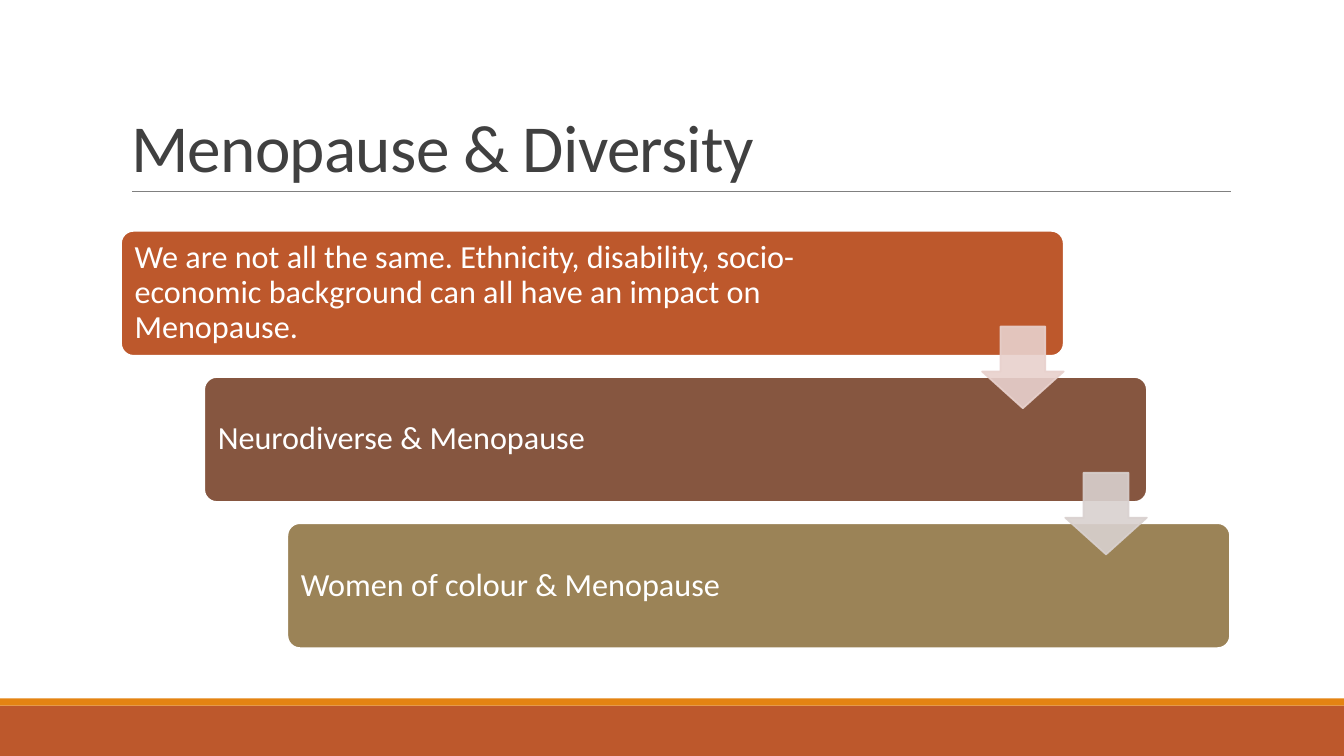
import pptx
import pptx.dml.color
import pptx.enum.shapes
import pptx.enum.text
import pptx.oxml
import pptx.oxml.ns
import pptx.util

Inches, Pt = pptx.util.Inches, pptx.util.Pt
SHAPES = pptx.enum.shapes.MSO_SHAPE
ANCHOR = pptx.enum.text.MSO_ANCHOR
ALIGN = pptx.enum.text.PP_ALIGN

HEADING = "Menopause & Diversity"
STEPS = [
    ("We are not all the same. Ethnicity, disability, socio-economic background "
     "can all have an impact on Menopause.", "rust"),
    ("Neurodiverse & Menopause", "brown"),
    ("Women of colour & Menopause", "khaki"),
]
ARROW_COLORS = ["pink", "mist"]
COLORS = {
    "rust": "BD582C", "brown": "865640", "khaki": "9B8357", "orange": "E48312",
    "pink": "E8D1CD", "mist": "D9D1CF", "heading": "404040", "rule": "808080",
    "white": "FFFFFF",
}
FONT = "Calibri"
SLIDE_W, SLIDE_H = 13.33, 7.5
LEFT, CONTENT_W = 1.2, 11
STEP_TOP, STEP_W, STEP_H, STEP_PITCH = 2.29, 9.35, 1.24, 1.45
STEP_INDENT = (CONTENT_W - STEP_W) / (len(STEPS) - 1)
ARROW_SIZE, ARROW_DROP = 0.81, 0.95


def rgb(color):
    return pptx.dml.color.RGBColor.from_string(COLORS[color])


def add_block(shapes, preset, box, fill, line=None):
    block = shapes.add_shape(preset, *map(Inches, box))
    block.shadow.inherit = False
    block.fill.solid()
    block.fill.fore_color.rgb = rgb(fill)
    if line:
        block.line.color.rgb = rgb(line)
        block.line.width = Pt(1.25)
    else:
        block.line.fill.background()
    return block


def write(frame, text, size, color, spacing):
    paragraph = frame.paragraphs[0]
    paragraph.alignment = ALIGN.LEFT
    paragraph.line_spacing = spacing
    run = paragraph.add_run()
    run.text = text
    run.font.name, run.font.size = FONT, Pt(size)
    run.font.color.rgb = rgb(color)
    return run


def add_frame(slide):
    """Footer bands, and the rule under the heading."""
    add_block(slide.shapes, SHAPES.RECTANGLE, (0, 7, SLIDE_W, 0.5), "rust")
    add_block(slide.shapes, SHAPES.RECTANGLE, (0, 6.93, SLIDE_W, 0.07), "orange")
    rule = slide.shapes.add_connector(
        pptx.enum.shapes.MSO_CONNECTOR.STRAIGHT,
        *map(Inches, (1.31, 1.9, 12.21, 1.9)))
    rule.line.color.rgb = rgb("rule")
    rule.line.width = Pt(0.5)
    pptx.oxml.ns  # namespace helpers used for the effect list
    rule._element.spPr.append(pptx.oxml.parse_xml(
        f"<a:effectLst {pptx.oxml.ns.nsdecls('a')}/>"))


def add_heading(slide):
    title = slide.shapes.title
    title.left, title.top, title.width, title.height = map(
        Inches, (LEFT, 0.31, CONTENT_W, 1.59))
    title.text_frame.vertical_anchor = ANCHOR.BOTTOM
    run = write(title.text_frame, HEADING, 48, "heading", 0.85)
    run.font._element.set("spc", "-50")


def add_step(slide, index, text, fill):
    box = (LEFT + index * STEP_INDENT, STEP_TOP + index * STEP_PITCH, STEP_W, STEP_H)
    step = add_block(slide.shapes, SHAPES.ROUNDED_RECTANGLE, box, fill, "white")
    step.adjustments[0] = 0.1
    frame = step.text_frame
    frame.word_wrap = True
    frame.vertical_anchor = ANCHOR.MIDDLE
    frame.margin_left = frame.margin_top = frame.margin_bottom = Inches(0.1)
    frame.margin_right = Inches(1.36)
    write(frame, text, 23, "white", 0.9)


def add_arrow(slide, index, color):
    right = LEFT + index * STEP_INDENT + STEP_W
    top = STEP_TOP + index * STEP_PITCH + ARROW_DROP
    arrow = add_block(slide.shapes, SHAPES.DOWN_ARROW,
                      (right - ARROW_SIZE, top, ARROW_SIZE, ARROW_SIZE), color, color)
    arrow.adjustments[0], arrow.adjustments[1] = 0.55, 0.45
    for tint in arrow._element.spPr.iter(pptx.oxml.ns.qn("a:srgbClr")):
        tint.append(pptx.oxml.parse_xml(
            f"<a:alpha {pptx.oxml.ns.nsdecls('a')} val='90000'/>"))


def main():
    deck = pptx.Presentation()
    deck.slide_width, deck.slide_height = Inches(SLIDE_W), Inches(SLIDE_H)
    slide = deck.slides.add_slide(deck.slide_layouts[5])
    add_frame(slide)
    add_heading(slide)
    for index, (text, fill) in enumerate(STEPS):
        add_step(slide, index, text, fill)
    for index, color in enumerate(ARROW_COLORS):
        add_arrow(slide, index, color)
    deck.save("out.pptx")


if __name__ == "__main__":
    main()
